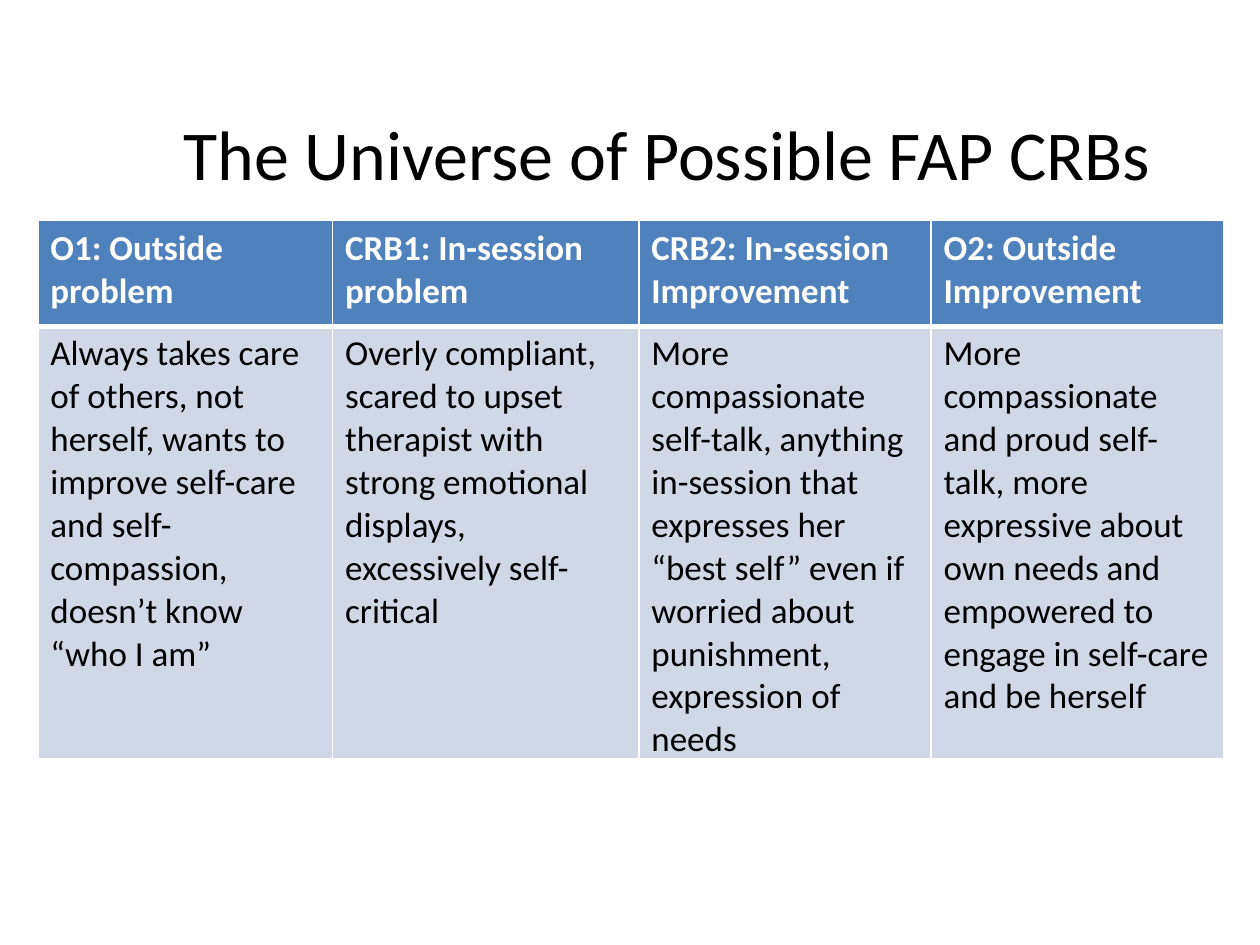
from lxml.etree import SubElement
from pptx import Presentation
from pptx.dml.color import RGBColor
from pptx.enum.text import MSO_AUTO_SIZE, PP_ALIGN
from pptx.oxml.ns import qn
from pptx.util import Inches, Pt

# Content
TITLE = "The Universe of Possible FAP CRBs"
BEHAVIORS = [
    ("O1: Outside problem",
     "Always takes care of others, not herself, wants to improve self-care "
     "and self-compassion, doesn’t know “who I am”"),
    ("CRB1: In-session problem",
     "Overly compliant, scared to upset therapist with strong emotional "
     "displays, excessively self-critical"),
    ("CRB2: In-session Improvement",
     "More compassionate self-talk, anything in-session that expresses her "
     "“best self” even if worried about punishment, expression of needs"),
    ("O2: Outside Improvement",
     "More compassionate and proud self-talk, more expressive about own needs "
     "and empowered to engage in self-care and be herself"),
]

# Look
FONT = "Calibri"
COLORS = {"header": "4F81BD", "body": "D0D8E8", "light": "FFFFFF", "dark": "000000"}
SLIDE_W, SLIDE_H = 10, 7.5
MARGIN = 0.03 * SLIDE_W
TABLE_TOP = 1.75
COLUMN_WIDTHS = [2.34, 2.43, 2.32, 2.32]
ROW_HEIGHTS = [0.84, 3.43]
# fill, text colour, bold, width of the bottom border
ROW_STYLES = [("header", "light", True, 3), ("body", "dark", False, 1)]


def add_text(frame, text, size, color, bold=False):
    run = frame.paragraphs[0].add_run()
    run.text = text
    run.font.name = FONT
    run.font.size = Pt(size)
    run.font.bold = bold
    run.font.color.rgb = RGBColor.from_string(COLORS[color])


def add_borders(cell, top, bottom):
    properties = cell._tc.get_or_add_tcPr()
    for side, width in (("lnL", 1), ("lnR", 1), ("lnT", top), ("lnB", bottom)):
        line = SubElement(properties, qn(f"a:{side}"), w=str(Pt(width)))
        fill = SubElement(line, qn("a:solidFill"))
        SubElement(fill, qn("a:srgbClr"), val=COLORS["light"])


prs = Presentation()
prs.slide_width, prs.slide_height = Inches(SLIDE_W), Inches(SLIDE_H)
slide = prs.slides.add_slide(prs.slide_layouts[6])

# Title
title = slide.shapes.add_textbox(
    Inches(0.68), Inches(0.83), Inches(9.23), Inches(0.77)).text_frame
title.word_wrap = True
title.auto_size = MSO_AUTO_SIZE.SHAPE_TO_FIT_TEXT
title.paragraphs[0].alignment = PP_ALIGN.CENTER
add_text(title, TITLE, 40, "dark")

# Table of behaviors
table = slide.shapes.add_table(
    len(ROW_HEIGHTS), len(BEHAVIORS), Inches(MARGIN), Inches(TABLE_TOP),
    Inches(sum(COLUMN_WIDTHS)), Inches(sum(ROW_HEIGHTS))).table
for column, width in zip(table.columns, COLUMN_WIDTHS):
    column.width = Inches(width)
for row, height in zip(table.rows, ROW_HEIGHTS):
    row.height = Inches(height)

for c, behavior in enumerate(BEHAVIORS):
    top = 1
    for r, (fill, color, bold, bottom) in enumerate(ROW_STYLES):
        cell = table.cell(r, c)
        add_borders(cell, top, bottom)
        cell.fill.solid()
        cell.fill.fore_color.rgb = RGBColor.from_string(COLORS[fill])
        add_text(cell.text_frame, behavior[r], 20, color, bold)
        top = bottom

prs.save("out.pptx")
